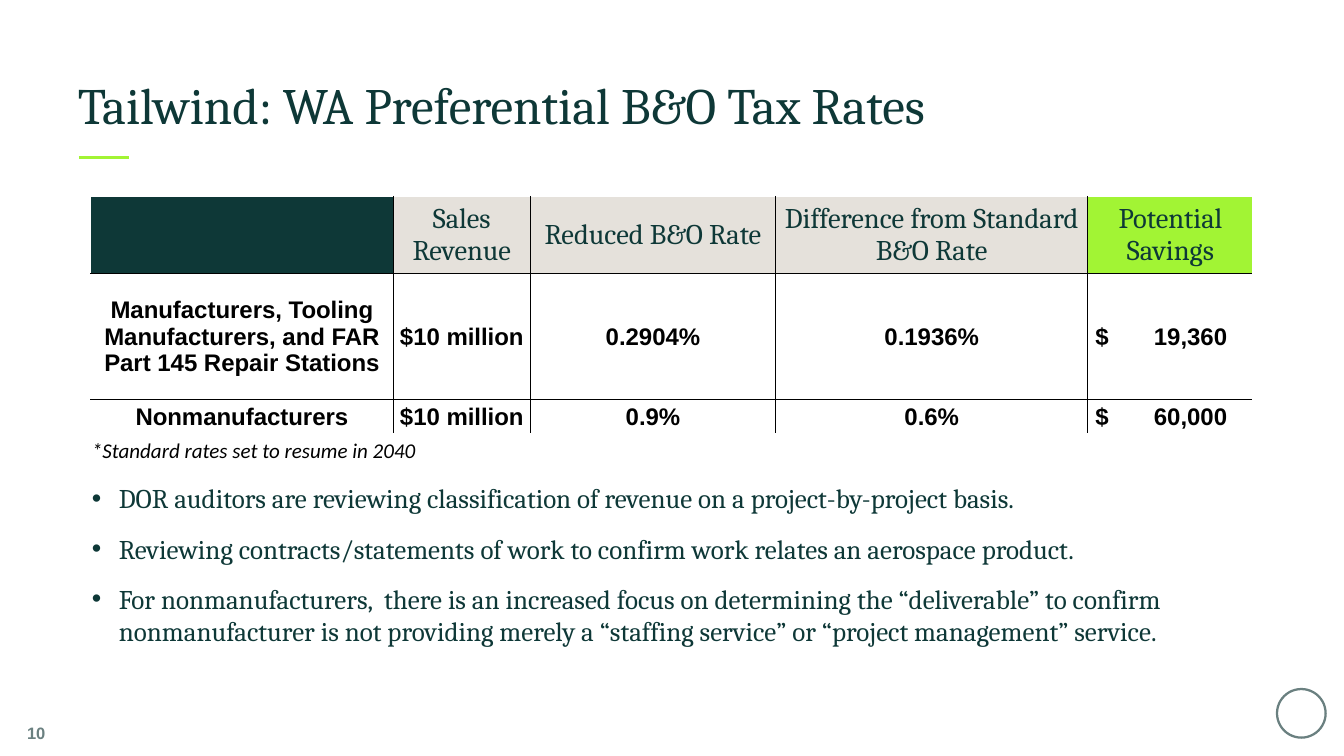
from lxml import etree
from pptx import Presentation
from pptx.dml.color import RGBColor
from pptx.enum.shapes import MSO_CONNECTOR, MSO_SHAPE
from pptx.enum.text import MSO_ANCHOR, PP_ALIGN
from pptx.oxml.ns import qn
from pptx.util import Inches, Pt

LEFT, CENTER, RIGHT = PP_ALIGN.LEFT, PP_ALIGN.CENTER, PP_ALIGN.RIGHT
TOP, MIDDLE, BOTTOM = MSO_ANCHOR.TOP, MSO_ANCHOR.MIDDLE, MSO_ANCHOR.BOTTOM
STRAIGHT, OVAL = MSO_CONNECTOR.STRAIGHT, MSO_SHAPE.OVAL

COLORS = {
    "forest": "0E3837",
    "lime": "A2F434",
    "stone": "E5E1DB",
    "gray": "6A8080",
    "black": "000000",
}

# The outer columns and rows are an empty margin around the grid
COLUMN_WIDTHS = [0.57, 2.8, 1.27, 2.27, 2.89, 1.53, 0.57]
ROW_HEIGHTS = [0.17, 0.17, 0.71, 1.17, 0.32, 0.28, 0.17]
FIRST_ROW, FIRST_COLUMN = 2, 1
RATES = [
    ["", "Sales Revenue", "Reduced B&O Rate",
     "Difference from Standard B&O Rate", "Potential Savings"],
    ["Manufacturers, Tooling Manufacturers, and FAR Part 145 Repair Stations",
     "$10 million", "0.2904%", "0.1936%", "$\t19,360"],
    ["Nonmanufacturers", "$10 million", "0.9%", "0.6%", "$\t60,000"],
]
HEADER_FILLS = ["forest", "stone", "stone", "stone", "lime"]
FOOTNOTE = "*Standard rates set to resume in 2040"
BULLETS = [
    "DOR auditors are reviewing classification of revenue on a "
    "project-by-project basis.",
    "Reviewing contracts/statements of work to confirm work relates an "
    "aerospace product.",
    "For nonmanufacturers,  there is an increased focus on determining the "
    "“deliverable” to confirm nonmanufacturer is not providing merely a "
    "“staffing service” or “project management” service.",
]


def color(name):
    return RGBColor.from_string(COLORS[name])


def style(para, font, size, color_name, align=LEFT, bold=False, italic=False):
    para.alignment = align
    para.font.name = font
    para.font.size = Pt(size)
    para.font.color.rgb = color(color_name)
    para.font.bold = bold
    para.font.italic = italic


def add_text(page, left, top, width, height, lines, anchor, *look):
    box = page.shapes.add_textbox(
        Inches(left), Inches(top), Inches(width), Inches(height))
    frame = box.text_frame
    frame.word_wrap = True
    frame.vertical_anchor = anchor
    frame.margin_left = frame.margin_right = 0
    frame.margin_top = frame.margin_bottom = 0
    frame.text = "\n".join(lines)
    for para in frame.paragraphs:
        style(para, *look)
    return box


def add_bullets(box):
    for para in box.text_frame.paragraphs:
        para.space_after = Pt(12)
        props = para._p.get_or_add_pPr()
        props.set("marL", str(Inches(0.38)))
        props.set("indent", str(Inches(-0.25)))
        font = etree.Element(qn("a:buFont"), typeface="Arial")
        bullet = etree.Element(qn("a:buChar"), char="•")
        spacing = props.find(qn("a:spcAft"))
        spacing.addnext(font)
        font.addnext(bullet)


def set_borders(cell):
    props = cell._tc.get_or_add_tcPr()
    for index, side in enumerate(("lnL", "lnR", "lnT", "lnB")):
        line = etree.Element(qn("a:" + side), w=str(Pt(0.5)))
        fill = etree.SubElement(line, qn("a:solidFill"))
        etree.SubElement(fill, qn("a:srgbClr"), val=COLORS["black"])
        props.insert(index, line)


def align_amount(cell):
    """Dollar sign at the left, figure at a right-aligned tab."""
    cell.margin_left = Inches(0.07)
    props = cell.text_frame.paragraphs[0]._p.get_or_add_pPr()
    tabs = etree.Element(qn("a:tabLst"))
    etree.SubElement(tabs, qn("a:tab"), pos=str(Inches(1.22)), algn="r")
    props.find(qn("a:defRPr")).addprevious(tabs)


def clear_cell(cell):
    cell.fill.background()
    cell.margin_left = cell.margin_right = cell.margin_top = Inches(0.01)
    cell.margin_bottom = 0
    cell.vertical_anchor = MIDDLE
    # A small size keeps empty rows from growing
    cell.text_frame.paragraphs[0]._p.get_or_add_endParaRPr().set("sz", "600")


def fill_cell(cell, text, *look):
    cell.text = text
    para = cell.text_frame.paragraphs[0]
    if text:
        style(para, *look)


def add_rates_table(page):
    table = page.shapes.add_table(
        len(ROW_HEIGHTS), len(COLUMN_WIDTHS), Inches(0.27), Inches(1.48),
        Inches(sum(COLUMN_WIDTHS)), Inches(sum(ROW_HEIGHTS))).table
    table.first_row = table.horz_banding = False
    for column, width in zip(table.columns, COLUMN_WIDTHS):
        column.width = Inches(width)
    for row, height in zip(table.rows, ROW_HEIGHTS):
        row.height = Inches(height)
    for cell in table.iter_cells():
        clear_cell(cell)

    # Header and body
    for r, texts in enumerate(RATES):
        for c, text in enumerate(texts):
            cell = table.cell(FIRST_ROW + r, FIRST_COLUMN + c)
            if r == 0:
                fill_cell(cell, text, "Cambria", 19, "forest", CENTER)
                cell.fill.solid()
                cell.fill.fore_color.rgb = color(HEADER_FILLS[c])
            else:
                amount = "\t" in text
                fill_cell(cell, text, "Arial", 16, "black",
                          LEFT if amount else CENTER, True)
                if amount:
                    align_amount(cell)
            set_borders(cell)

    # Footnote under the grid
    note = table.cell(FIRST_ROW + len(RATES), FIRST_COLUMN)
    note.merge(table.cell(FIRST_ROW + len(RATES), FIRST_COLUMN + 1))
    fill_cell(note, FOOTNOTE, "Calibri", 14, "black", LEFT, False, True)
    note.vertical_anchor = BOTTOM


def add_accent_line(page):
    line = page.shapes.add_connector(
        STRAIGHT, Inches(0.73), Inches(1.46), Inches(1.19), Inches(1.46))
    line.line.color.rgb = color("lime")
    line.line.width = Pt(2)
    etree.SubElement(line._element.spPr, qn("a:effectLst"))


def add_badge(page):
    badge = page.shapes.add_shape(
        OVAL, Inches(11.82), Inches(6.38), Inches(0.45), Inches(0.45))
    badge.shadow.inherit = False
    badge.fill.background()
    badge.line.color.rgb = color("gray")
    badge.line.width = Pt(1.5)


def main():
    deck = Presentation()
    deck.slide_width, deck.slide_height = Inches(12.44), Inches(7)
    page = deck.slides.add_slide(deck.slide_layouts[6])

    # Frame of the page
    add_badge(page)
    add_accent_line(page)
    add_text(page, 0.72, 0.5, 11, 0.75,
             ["Tailwind: WA Preferential B&O Tax Rates"], BOTTOM,
             "Cambria", 34, "forest")
    add_text(page, 0, 6.58, 0.42, 0.42, ["10"], MIDDLE,
             "Arial", 11, "gray", RIGHT, True)

    # Content
    add_text_box = add_text(page, 0.72, 4.46, 11, 1.77, BULLETS, TOP,
                            "Cambria", 18, "forest")
    add_bullets(add_text_box)
    add_rates_table(page)
    deck.save("out.pptx")


if __name__ == "__main__":
    main()
